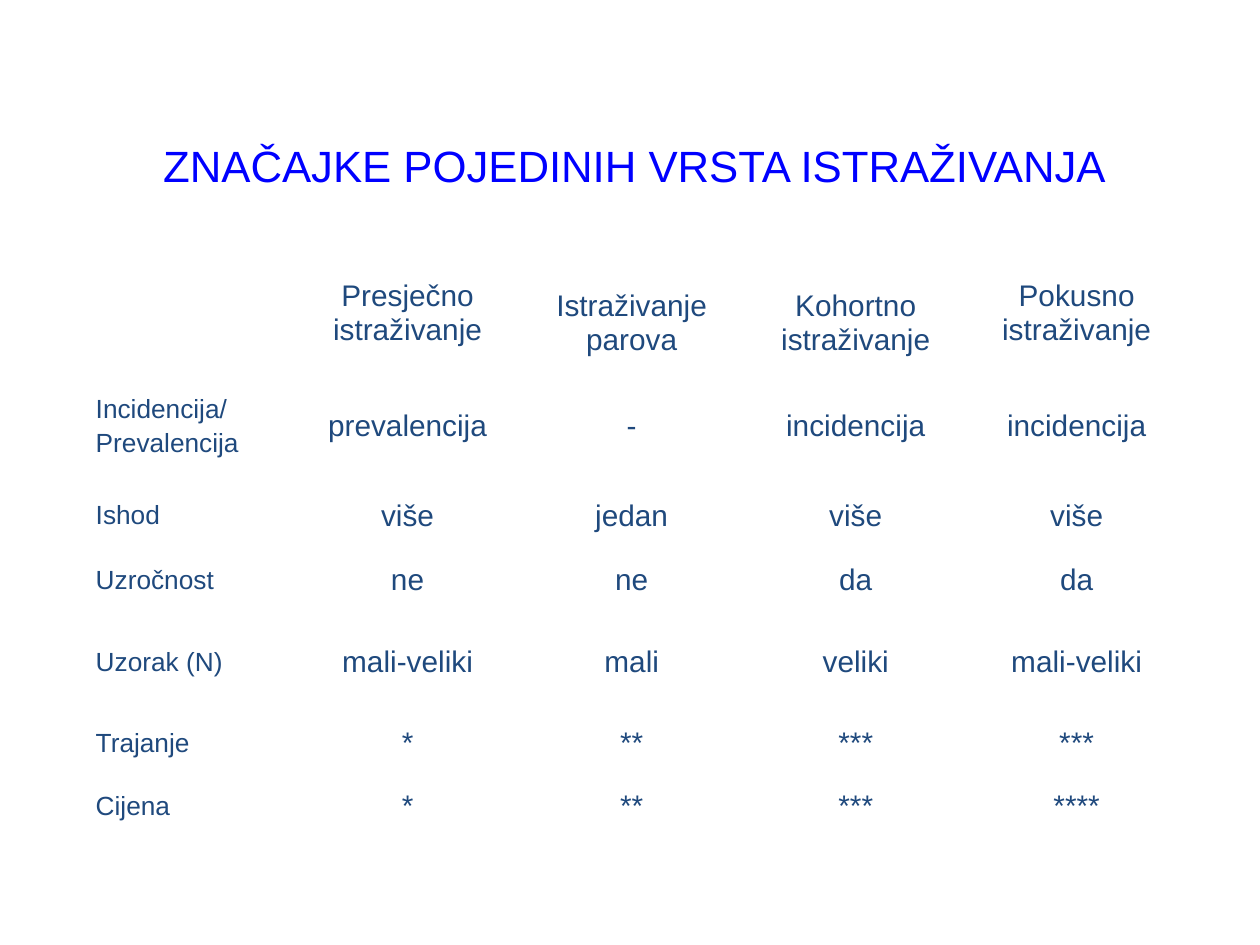
from dataclasses import dataclass

from lxml.etree import SubElement
from pptx import Presentation
from pptx.dml.color import RGBColor
from pptx.enum.text import MSO_ANCHOR, PP_ALIGN
from pptx.oxml.ns import qn
from pptx.util import Pt


@dataclass(frozen=True)
class Theme:
    font: str = "Arial"
    title_color: str = "0000FF"
    text_color: str = "1F497D"
    border_color: str = "FFFFFF"
    title_size: int = 25
    label_size: int = 15
    value_size: int = 17
    border: float = 2.25
    last_border: float = 3


THEME = Theme()
TITLE = "ZNAČAJKE POJEDINIH VRSTA ISTRAŽIVANJA"
ROWS = [
    ("", "Presječno istraživanje", "Istraživanje parova",
     "Kohortno istraživanje", "Pokusno istraživanje"),
    ("Incidencija/\nPrevalencija", "prevalencija", "-", "incidencija", "incidencija"),
    ("Ishod", "više", "jedan", "više", "više"),
    ("Uzročnost", "ne", "ne", "da", "da"),
    ("Uzorak (N)", "mali-veliki", "mali", "veliki", "mali-veliki"),
    ("Trajanje", "*", "**", "***", "***"),
    ("Cijena", "*", "**", "***", "****"),
]
TOP_ANCHORED = {(0, 1), (0, 4)}
COL_WIDTHS = [122.4, 126, 130.1, 126, 126.5]
ROW_HEIGHTS = [53.3, 64.8, 37.4, 36, 57.6, 35.3, 36.7]
TABLE_LEFT, TABLE_TOP = 47.5, 159.8


def format_paragraph(p, size, color, align):
    p.alignment = align
    for r in p.runs:
        r.font.name = THEME.font
        r.font.size = Pt(size)
        r.font.color.rgb = RGBColor.from_string(color)


def add_border(cell, side, width):
    tc_pr = cell._tc.get_or_add_tcPr()
    ln = SubElement(tc_pr, qn(f"a:{side}"), w=str(Pt(width)))
    fill = SubElement(ln, qn("a:solidFill"))
    SubElement(fill, qn("a:srgbClr"), val=THEME.border_color)


def fill_cell(cell, text, row, col):
    is_label = col == 0
    size = THEME.label_size if is_label else THEME.value_size
    cell.margin_left = cell.margin_right = Pt(7.2)
    cell.margin_top, cell.margin_bottom = Pt(0), Pt(3.6)
    top = (row, col) in TOP_ANCHORED
    cell.vertical_anchor = MSO_ANCHOR.TOP if top else MSO_ANCHOR.MIDDLE
    cell.text_frame.text = text
    for i, p in enumerate(cell.text_frame.paragraphs):
        format_paragraph(p, size, THEME.text_color,
                         PP_ALIGN.LEFT if is_label else PP_ALIGN.CENTER)
        if i:
            p.space_before = Pt(0.2 * size)
    add_border(cell, "lnT", THEME.border)
    last = row == len(ROWS) - 1
    add_border(cell, "lnB", THEME.last_border if last else THEME.border)
    cell.fill.background()


def add_title(s):
    sp = s.shapes.title
    sp.left, sp.top, sp.width, sp.height = Pt(70.6), Pt(60.5), Pt(583.9), Pt(67)
    tf = sp.text_frame
    tf.text = TITLE
    tf.vertical_anchor = MSO_ANCHOR.MIDDLE
    format_paragraph(tf.paragraphs[0], THEME.title_size, THEME.title_color,
                     PP_ALIGN.CENTER)


def add_comparison(s):
    table = s.shapes.add_table(
        len(ROWS), len(COL_WIDTHS), Pt(TABLE_LEFT), Pt(TABLE_TOP),
        Pt(sum(COL_WIDTHS)), Pt(sum(ROW_HEIGHTS))).table
    table.first_row = table.horz_banding = False
    for column, width in zip(table.columns, COL_WIDTHS):
        column.width = Pt(width)
    for row, height in zip(table.rows, ROW_HEIGHTS):
        row.height = Pt(height)
    for i, values in enumerate(ROWS):
        for j, text in enumerate(values):
            fill_cell(table.cell(i, j), text, i, j)


def main():
    prs = Presentation()
    prs.slide_width, prs.slide_height = Pt(720), Pt(540)
    s = prs.slides.add_slide(prs.slide_layouts[5])
    add_title(s)
    add_comparison(s)
    prs.save("out.pptx")


if __name__ == "__main__":
    main()
